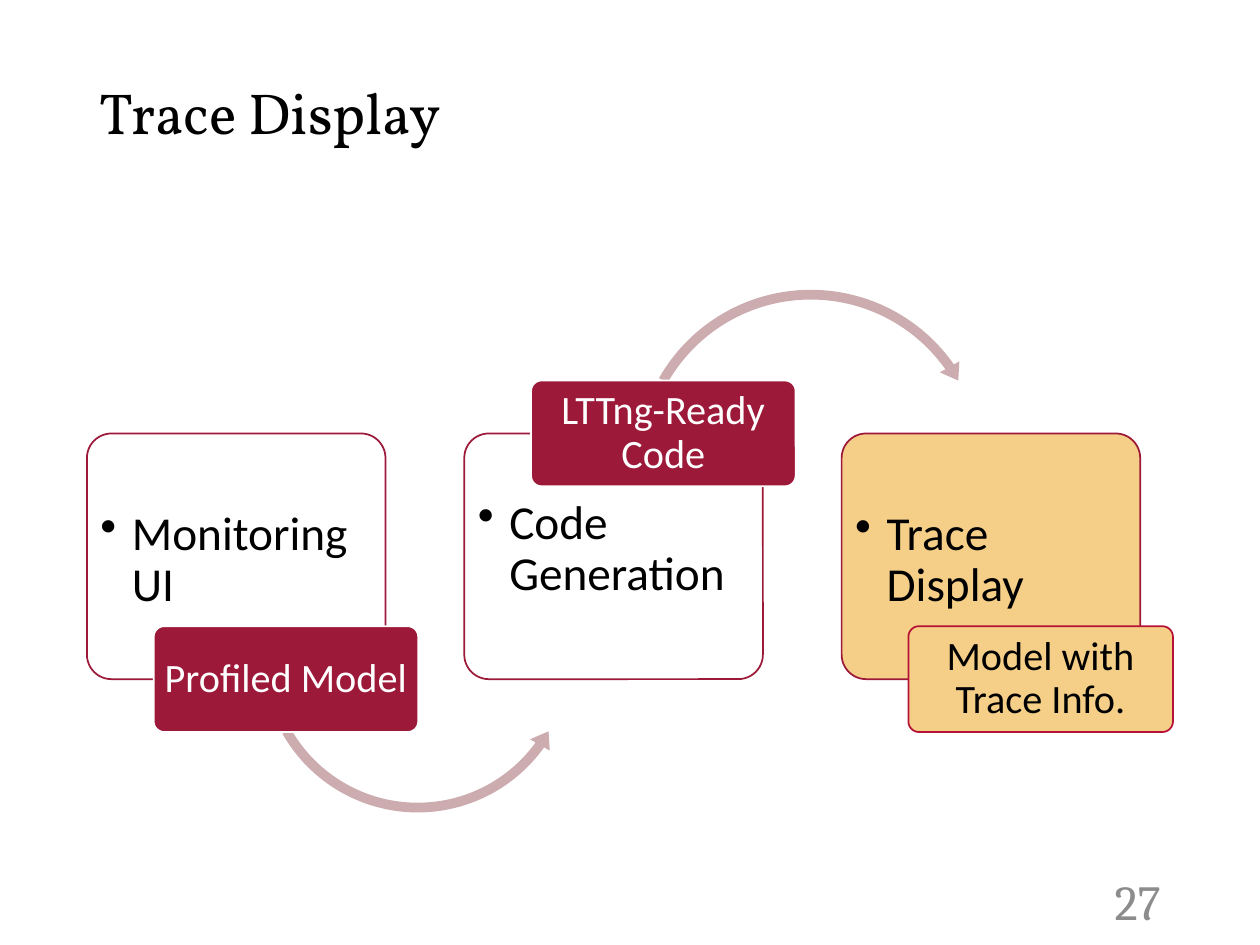
from lxml import etree
from pptx import Presentation
from pptx.dml.color import RGBColor
from pptx.enum.shapes import MSO_SHAPE
from pptx.enum.text import MSO_ANCHOR, PP_ALIGN
from pptx.oxml.ns import qn
from pptx.util import Inches, Pt

ROUNDED = MSO_SHAPE.ROUNDED_RECTANGLE
ARROW_UP = MSO_SHAPE.CIRCULAR_ARROW
ARROW_DOWN = MSO_SHAPE.LEFT_CIRCULAR_ARROW
TOP, MIDDLE = MSO_ANCHOR.TOP, MSO_ANCHOR.MIDDLE
LEFT, CENTER, RIGHT = PP_ALIGN.LEFT, PP_ALIGN.CENTER, PP_ALIGN.RIGHT

WHITE = RGBColor(0xFF, 0xFF, 0xFF)
BLACK = RGBColor(0x00, 0x00, 0x00)
GRAY = RGBColor(0x8C, 0x8C, 0x8C)
MAROON = RGBColor(0x9D, 0x19, 0x39)
CRIMSON = RGBColor(0xB6, 0x11, 0x36)
GOLD = RGBColor(0xF5, 0xCF, 0x87)
ROSE = RGBColor(0xCC, 0xAC, 0xAF)


def add_block(kind, at, fill, line=None, adj=(0.1,)):
    sp = s.shapes.add_shape(kind, *[Inches(v) for v in at])
    sp.shadow.inherit = False
    sp.fill.solid()
    sp.fill.fore_color.rgb = fill
    if line is None:
        sp.line.fill.background()
    else:
        sp.line.color.rgb = line
        sp.line.width = Pt(1)
    for i, value in enumerate(adj):
        sp.adjustments[i] = value
    return sp


def set_text(sp, text, size, font="Calibri", color=BLACK, align=LEFT, anchor=MIDDLE,
             insets=(0.1, 0.05, 0.1, 0.05), spacing=0.9, bullet=False):
    tf = sp.text_frame
    tf.word_wrap = True
    tf.vertical_anchor = anchor
    tf.margin_left, tf.margin_top, tf.margin_right, tf.margin_bottom = [Inches(v) for v in insets]
    p = tf.paragraphs[0]
    p.alignment = align
    p.line_spacing = spacing
    if bullet:
        p.level = 1
        pPr = p._p.get_or_add_pPr()
        pPr.set("marL", str(Inches(0.25)))
        pPr.set("indent", str(Inches(-0.25)))
        etree.SubElement(pPr, qn("a:buChar")).set("char", "•")
    r = p.add_run()
    r.text = text
    r.font.size = Pt(size)
    r.font.name = font
    r.font.color.rgb = color


prs = Presentation()
prs.slide_width, prs.slide_height = Inches(10), Inches(7.5)
s = prs.slides.add_slide(prs.slide_layouts[5])

title = s.shapes.title
title.left, title.top, title.width, title.height = [Inches(v) for v in (0.69, 0.32, 8.62, 1.2)]
set_text(title, "Trace Display", 33, font="Vollkorn")

UP, DOWN = 3.02, 4.97
steps = [
    ("Monitoring UI", "Profiled Model", DOWN, WHITE, MAROON, WHITE, WHITE,
     (ARROW_DOWN, (2.03, 3.93, 2.57, 2.57), (0.03, 3.678, 21.433, 90.245, 0.035))),
    ("Code Generation", "LTTng-Ready Code", UP, WHITE, MAROON, WHITE, WHITE,
     (ARROW_UP, (5, 2.25, 2.87, 2.87), (0.027, 3.266, 194.979, 125.755, 0.031))),
    ("Trace Display", "Model with Trace Info.", DOWN, GOLD, GOLD, CRIMSON, BLACK, None),
]
for i, (step, output, top, fill, label_fill, label_line, label_color, arrow) in enumerate(steps):
    left = 0.69 + 2.995 * i
    box = add_block(ROUNDED, (left, 3.44, 2.37, 1.95), fill, MAROON)
    text_top = 0.46 if top == UP else 0.55
    set_text(box, step, 27, anchor=TOP, insets=(0.05, text_top, 0.05, 0.05), bullet=True)
    if arrow:
        kind, at, adj = arrow
        add_block(kind, at, ROSE, adj=adj)
    label = add_block(ROUNDED, (left + 0.53, top, 2.1, 0.84), label_fill, label_line)
    set_text(label, output, 23, color=label_color, align=CENTER, insets=(0.05, 0.03, 0.05, 0.03))

number = s.shapes.add_textbox(Inches(7.06), Inches(6.95), Inches(2.25), Inches(0.4))
set_text(number, "27", 28, font="Cambria", color=GRAY, align=RIGHT, spacing=1.0)

prs.save("out.pptx")
